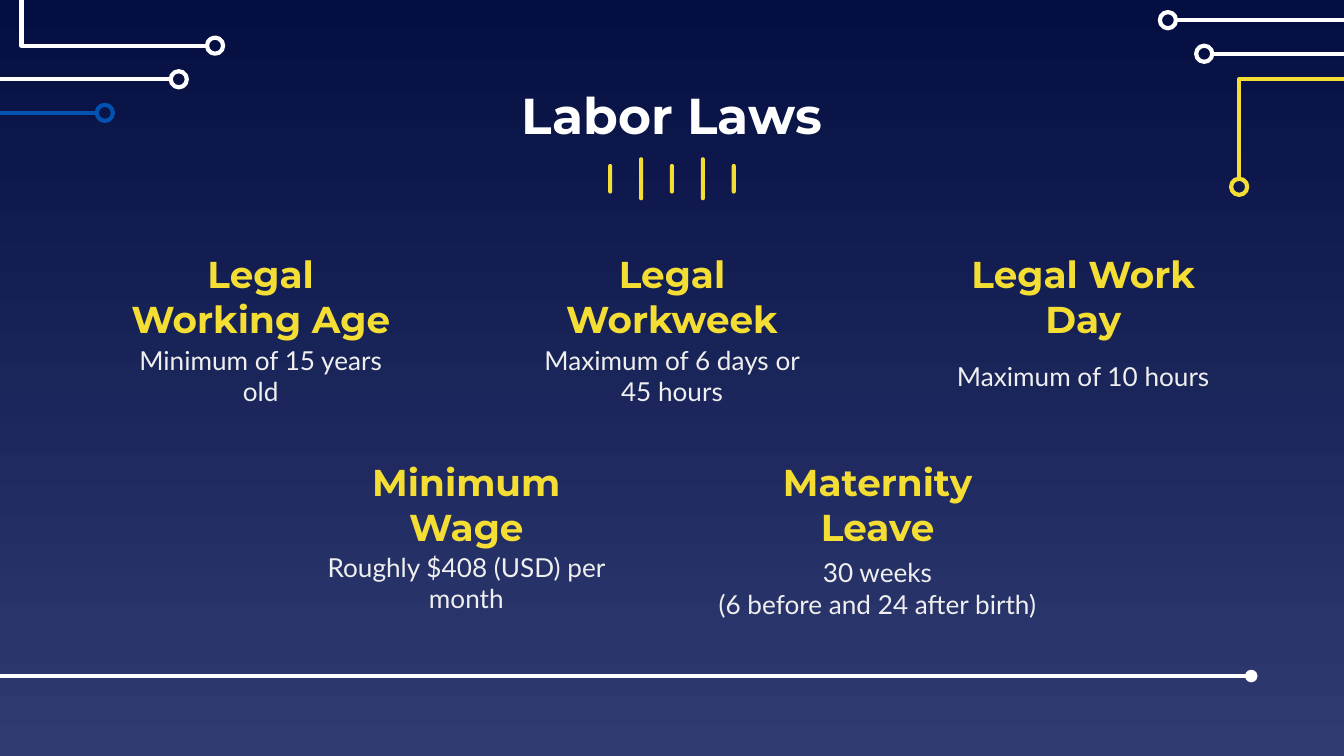
from dataclasses import dataclass

from lxml.etree import SubElement
from pptx import Presentation
from pptx.dml.color import RGBColor
from pptx.enum.shapes import MSO_CONNECTOR, MSO_SHAPE
from pptx.enum.text import MSO_ANCHOR, PP_ALIGN
from pptx.oxml.ns import qn
from pptx.shapes.autoshape import Shape
from pptx.slide import Slide
from pptx.util import Inches, Pt


@dataclass(frozen=True)
class TextStyle:
    font: str
    size: int
    color: str
    bold: bool = False


@dataclass(frozen=True)
class Theme:
    top: str = "040E41"
    bottom: str = "303B72"
    white: str = "FFFFFF"
    yellow: str = "F5DE34"
    blue: str = "0152B1"
    line_width: float = 2.25
    title: TextStyle = TextStyle("Montserrat", 27, "FFFFFF", True)
    heading: TextStyle = TextStyle("Montserrat", 20, "F5DE34", True)
    body: TextStyle = TextStyle("Lato", 14, "EFEFEF")


@dataclass(frozen=True)
class Trace:
    points: list[tuple[float, float]]
    node_left: float
    node_top: float
    color: str


@dataclass(frozen=True)
class Topic:
    heading: str
    lines: list[str]
    center: float
    top: float
    body_offset: float = 0.59
    body_width: float = 2.32


THEME = Theme()
NODE_SIZE = 0.12
TRACE_WIDTH, TRACE_HEIGHT = 1.39, 1.1
BOX_WIDTH, BOX_HEIGHT = 2.32, 0.52
CENTER, COLUMN_STEP = 5, 3.06
BAR_STEP, BAR_WIDTH, BAR_MIDDLE = 0.23, 0.03, 1.33


def elbow(tip: float, y: float, color: str, side: int) -> Trace:
    """A trace that runs to the right (side 1) or left (side -1), then up."""
    corner = tip + side * TRACE_WIDTH
    points = [(tip, y), (corner, y), (corner, y - TRACE_HEIGHT)]
    return Trace(points, tip - (0.11 if side > 0 else 0.01), y - NODE_SIZE / 2, color)


TRACES = [
    elbow(8.74, 0.15, THEME.white, 1),
    Trace([(9.22, 1.33), (9.22, 0.59), (10.4, 0.59), (10.4, -0.12)], 9.16, 1.33, THEME.yellow),
    elbow(9.01, 0.4, THEME.white, 1),
    elbow(1.55, 0.34, THEME.white, -1),
    elbow(1.28, 0.59, THEME.white, -1),
    elbow(0.73, 0.84, THEME.blue, -1),
]

TOPICS = [
    Topic("Legal Working Age", ["Minimum of 15 years old"], CENTER - COLUMN_STEP, 1.94),
    Topic("Legal Workweek", ["Maximum of 6 days or 45 hours"], CENTER, 1.94),
    Topic("Legal Work Day", ["Maximum of 10 hours"], CENTER + COLUMN_STEP, 1.94),
    Topic("Minimum Wage", ["Roughly $408 (USD) per month"], CENTER - COLUMN_STEP / 2, 3.49, 0.58),
    Topic("Maternity Leave", ["30 weeks", "(6 before and 24 after birth)"],
          CENTER + COLUMN_STEP / 2, 3.49, 0.62, 2.73),
]


def paint_background(page: Slide) -> None:
    fill = page.background.fill
    fill.gradient()
    fill.gradient_angle = 270
    for stop, position, color in zip(fill.gradient_stops, (0, 1), (THEME.top, THEME.bottom)):
        stop.position = position
        stop.color.rgb = RGBColor.from_string(color)


def outline(shape: Shape, color: str) -> None:
    shape.shadow.inherit = False
    shape.fill.background()
    shape.line.color.rgb = RGBColor.from_string(color)
    shape.line.width = Pt(THEME.line_width)


def draw_trace(page: Slide, trace: Trace) -> None:
    start, *rest = [(Inches(x), Inches(y)) for x, y in trace.points]
    builder = page.shapes.build_freeform(*start)
    builder.add_line_segments(rest, close=False)
    outline(builder.convert_to_shape(), trace.color)
    node = page.shapes.add_shape(MSO_SHAPE.OVAL, Inches(trace.node_left), Inches(trace.node_top),
                                 Inches(NODE_SIZE), Inches(NODE_SIZE))
    outline(node, trace.color)


def draw_base_line(page: Slide) -> None:
    line = page.shapes.add_connector(MSO_CONNECTOR.STRAIGHT, Inches(-0.01), Inches(5.03),
                                     Inches(9.31), Inches(5.03))
    line.line.color.rgb = RGBColor.from_string(THEME.white)
    line.line.width = Pt(THEME.line_width)
    properties = line._element.spPr
    SubElement(properties.find(qn("a:ln")), qn("a:tailEnd"), type="oval")
    SubElement(properties, qn("a:effectLst"))


def draw_bar(page: Slide, center: float, height: float) -> None:
    bar = page.shapes.add_shape(MSO_SHAPE.ROUNDED_RECTANGLE, Inches(center - BAR_WIDTH / 2),
                                Inches(BAR_MIDDLE - height / 2), Inches(BAR_WIDTH), Inches(height))
    bar.adjustments[0] = 0.5
    bar.shadow.inherit = False
    bar.fill.solid()
    bar.fill.fore_color.rgb = RGBColor.from_string(THEME.yellow)
    bar.line.fill.background()


def add_text(page: Slide, lines: list[str], center: float, top: float, width: float,
             height: float, style: TextStyle) -> None:
    box = page.shapes.add_textbox(Inches(center - width / 2), Inches(top),
                                  Inches(width), Inches(height))
    frame = box.text_frame
    frame.word_wrap = True
    frame.vertical_anchor = MSO_ANCHOR.MIDDLE
    frame.margin_left = frame.margin_right = Inches(0.1)
    frame.margin_top = frame.margin_bottom = Inches(0.1)
    frame.text = "\n".join(lines)
    for para in frame.paragraphs:
        para.alignment = PP_ALIGN.CENTER
        para.font.name = style.font
        para.font.size = Pt(style.size)
        para.font.bold = style.bold
        para.font.color.rgb = RGBColor.from_string(style.color)


def main() -> None:
    # Widescreen deck, 16:9
    deck = Presentation()
    deck.slide_width = Inches(10)
    deck.slide_height = Inches(10) * 9 // 16
    page = deck.slides.add_slide(deck.slide_layouts[6])

    # Background and circuit decoration
    paint_background(page)
    for trace in TRACES:
        draw_trace(page, trace)
    draw_base_line(page)

    # Title with its row of bars
    add_text(page, ["Labor Laws"], CENTER, 0.59, 6.75, BOX_HEIGHT, THEME.title)
    for index, height in enumerate((0.22, 0.32, 0.22, 0.32, 0.22)):
        draw_bar(page, CENTER + (index - 2) * BAR_STEP, height)

    # Topics
    for topic in TOPICS:
        add_text(page, [topic.heading], topic.center, topic.top, BOX_WIDTH, BOX_HEIGHT,
                 THEME.heading)
        add_text(page, topic.lines, topic.center, topic.top + topic.body_offset,
                 topic.body_width, 0.53, THEME.body)

    deck.save("out.pptx")


if __name__ == "__main__":
    main()
